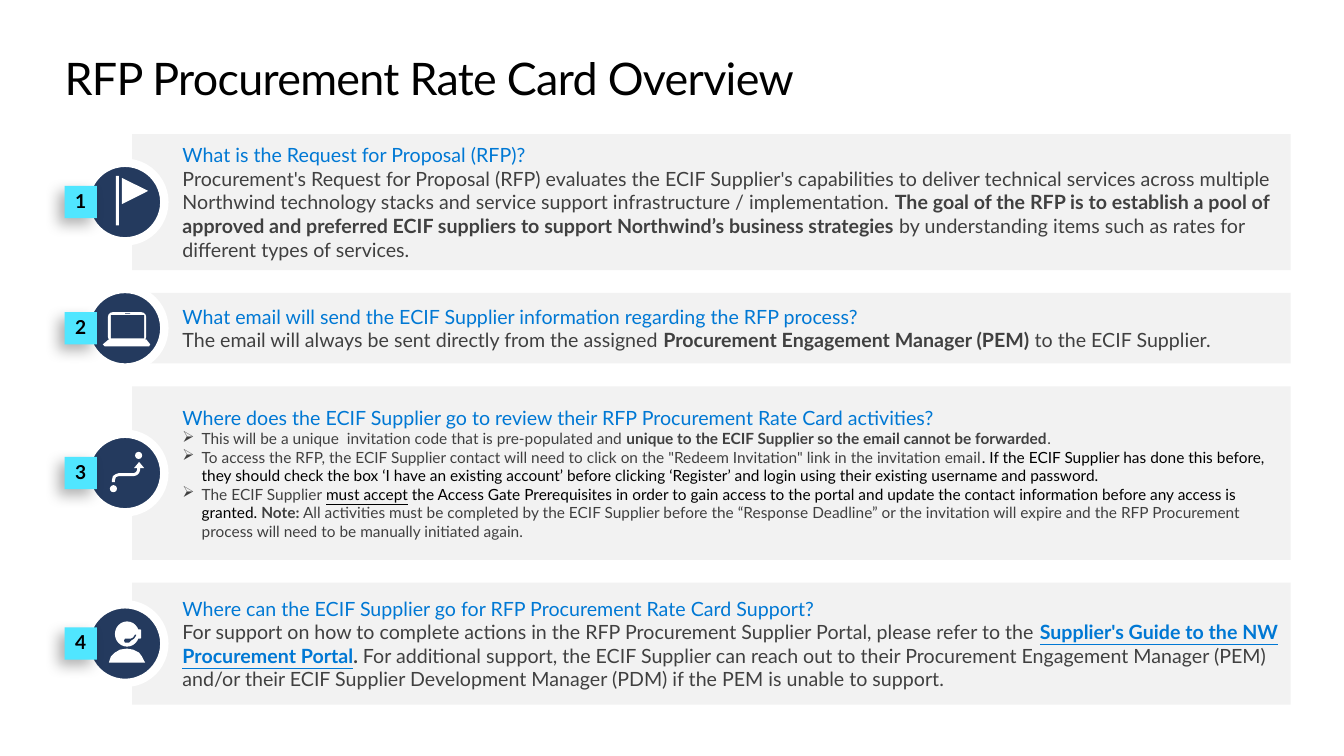
from dataclasses import dataclass

from lxml import etree
from pptx import Presentation
from pptx.dml.color import RGBColor
from pptx.enum import shapes, text
from pptx.oxml import ns
from pptx.util import Inches, Pt


@dataclass(frozen=True)
class Theme:
    font: str = "Lato"
    black: str = "000000"
    white: str = "FFFFFF"
    panel: str = "F2F2F2"
    blue: str = "0078D4"
    gray: str = "404040"
    navy: str = "243A5E"
    cyan: str = "50E6FF"
    title: float = 32
    body: float = 14
    bullet: float = 11
    number: float = 13.7


T = Theme()
SHAPE = shapes.MSO_SHAPE

# A run is its text followed by any of: "bold", "underline", a colour.
SECTIONS = [
    (1.35, "flag", "What is the Request for Proposal (RFP)?", False, [[
        ("Procurement's Request for Proposal (RFP) evaluates the ECIF Supplier's capabilities to deliver "
         "technical services across multiple Northwind technology stacks and service support "
         "infrastructure / implementation. ",),
        ("The goal of the RFP is to establish a pool of approved and preferred ECIF suppliers to support "
         "Northwind’s business strategies ", "bold"),
        ("by understanding items such as rates for different types of services.",)]]),
    (0.70, "laptop", "What email will send the ECIF Supplier information regarding the RFP process?", False, [[
        ("The email will always be sent directly from the assigned ",),
        ("Procurement Engagement Manager (PEM)", "bold"),
        (" to the ECIF Supplier.",)]]),
    (1.72, "route", "Where does the ECIF Supplier go to review their RFP Procurement Rate Card activities?", True, [
        [("This will be a unique  invitation code that is pre-populated and ",),
         ("unique to the ECIF Supplier so the email cannot be forwarded", "bold"),
         (".",)],
        [("To access the RFP, the ECIF Supplier contact will need to click on the \"Redeem Invitation\" "
          "link in the invitation email",),
         (". If the ECIF Supplier has done this before, they should check the box ‘I have an existing "
          "account’ before clicking ‘Register’ and login using their existing username and password.",
          T.black)],
        [("The ECIF Supplier ",),
         ("must accept", "underline", T.black),
         (" the Access Gate Prerequisites in order to gain access to the portal and update the contact "
          "information before any access is granted. ", T.black),
         ("Note:", "bold"),
         (" All activities must be completed by the ECIF Supplier before the “Response Deadline” or the "
          "invitation will expire and the RFP Procurement process will need to be manually initiated again.",)]]),
    (1.21, "agent", "Where can the ECIF Supplier go for RFP Procurement Rate Card Support?", False, [[
        ("For support on how to complete actions in the RFP Procurement Supplier Portal, please refer to the ",),
        ("Supplier's Guide to the NW Procurement Portal", "bold", "underline", T.blue),
        (". ", "bold"),
        ("For additional support, the ECIF Supplier can reach out to their Procurement Engagement Manager "
         "(PEM) and/or their ECIF Supplier Development Manager (PDM) if the PEM is unable to support.",)]]),
]

# Icon parts in hundredths of an inch from the centre of the badge:
# a preset with its box, or None with the points of an outline.
ICONS = {
    "flag": [
        (None, [(-3, -24), (23, -11), (-3, 2)], T.white),
        (SHAPE.RECTANGLE, (-9, -26, 3, 49), T.white)],
    "laptop": [
        (SHAPE.ROUNDED_RECTANGLE, (-17, -16, 38, 29), T.white),
        (SHAPE.RECTANGLE, (-14, -13, 33, 23), T.navy),
        (SHAPE.RECTANGLE, (0, -15, 5, 0.6), T.navy),
        (None, [(-16, 11), (21, 11), (25, 16), (24, 18), (-20, 18), (-22, 16)], T.white)],
    "route": [
        (SHAPE.OVAL, (-15, 12, 7, 7), T.white),
        (SHAPE.OVAL, (10, -21, 7, 7), T.white),
        (None, [(19, -5), (14, -11), (9, -5), (12, -5), (12, -3), (11, -1), (9, 0), (-6, 0),
                (-9, 1), (-12, 3), (-13, 7), (-13, 9), (-10, 9), (-10, 7), (-9, 4), (-6, 3),
                (9, 3), (12, 2), (14, 0), (15, -3), (15, -5)], T.white)],
    "agent": [
        (SHAPE.OVAL, (-10, -22, 24, 25), T.white),
        (SHAPE.ROUNDED_RECTANGLE, (11, -14, 5, 9), T.white),
        (None, [(-16, 19), (-14, 13), (-10, 9), (-5, 6), (2, 5), (8, 6), (14, 9), (17, 13),
                (20, 19)], T.white),
        (None, [(0, -5), (-1, -3), (0, -1), (4, -1), (6, -3), (9, -5), (11, -8), (11, -9),
                (10, -9), (8, -6), (6, -5)], T.navy)],
}


def paint(sp, fill):
    sp.shadow.inherit = False
    sp.fill.solid()
    sp.fill.fore_color.rgb = RGBColor.from_string(fill)
    sp.line.fill.background()
    return sp


def add_preset(s, kind, x, y, w, h, fill):
    return paint(s.shapes.add_shape(kind, Inches(x), Inches(y), Inches(w), Inches(h)), fill)


def style_run(r, size, color, bold=False, underline=False):
    r.font.name, r.font.size = T.font, Pt(size)
    r.font.color.rgb = RGBColor.from_string(color)
    r.font.bold, r.font.underline = bold, underline


def set_insets(tf, left=0, top=0, right=0, bottom=0):
    tf.word_wrap = True
    tf.margin_left, tf.margin_top = Inches(left), Inches(top)
    tf.margin_right, tf.margin_bottom = Inches(right), Inches(bottom)


def add_title(s, x, y, w, h):
    tf = s.shapes.add_textbox(Inches(x), Inches(y), Inches(w), Inches(h)).text_frame
    set_insets(tf)
    tf.text = "RFP Procurement Rate Card Overview"
    r = tf.paragraphs[0].runs[0]
    style_run(r, T.title, T.black)
    r.font._element.set("spc", "-50")


def add_bullet(p):
    pPr = p._p.get_or_add_pPr()
    pPr.set("marL", str(Inches(0.19)))
    pPr.set("indent", str(-Inches(0.19)))
    etree.SubElement(pPr, ns.qn("a:buChar"), char="➢")


def add_panel(s, x, y, w, h, heading, bulleted, paragraphs):
    tf = add_preset(s, SHAPE.RECTANGLE, x, y, w, h, T.panel).text_frame
    set_insets(tf, 0.5, 0.05, 0.1, 0.05)
    tf.vertical_anchor = text.MSO_ANCHOR.MIDDLE
    tf.text = heading
    tf.paragraphs[0].alignment = text.PP_ALIGN.LEFT
    style_run(tf.paragraphs[0].runs[0], T.body, T.blue)
    for runs in paragraphs:
        p = tf.add_paragraph()
        p.alignment = text.PP_ALIGN.LEFT
        if bulleted:
            add_bullet(p)
        for words, *marks in runs:
            r = p.add_run()
            r.text = words
            color = next((m for m in marks if m not in ("bold", "underline")), T.gray)
            style_run(r, T.bullet if bulleted else T.body, color, "bold" in marks, "underline" in marks)


def add_soft_shadow(sp):
    effects = sp._element.spPr.find(ns.qn("a:effectLst"))
    shadow = etree.SubElement(effects, ns.qn("a:outerShdw"), blurRad=str(Pt(10)), dist=str(Pt(6)),
                              dir=str(135 * 60000), algn="ctr", rotWithShape="0")
    color = etree.SubElement(shadow, ns.qn("a:srgbClr"), val=T.black)
    etree.SubElement(color, ns.qn("a:alpha"), val="30000")


def add_icon(s, cx, cy, parts):
    for kind, geometry, fill in parts:
        if kind is None:
            points = [(Inches(cx + dx / 100), Inches(cy + dy / 100)) for dx, dy in geometry]
            outline = s.shapes.build_freeform(*points[0])
            outline.add_line_segments(points[1:], close=True)
            paint(outline.convert_to_shape(), fill)
        else:
            dx, dy, w, h = (v / 100 for v in geometry)
            add_preset(s, kind, cx + dx, cy + dy, w, h, fill)


def add_badge(s, cx, cy, number, icon):
    """Icon disc centred on the given point, with its number tag on the left."""
    disc, tag = 0.78, 0.32
    sp = add_preset(s, SHAPE.OVAL, cx - disc / 2, cy - disc / 2, disc, disc, T.navy)
    sp.line.color.rgb = RGBColor.from_string(T.white)
    sp.line.width = Pt(6)
    sp = add_preset(s, SHAPE.RECTANGLE, cx - 0.6, cy - tag / 2, tag, tag, T.cyan)
    add_soft_shadow(sp)
    tf = sp.text_frame
    set_insets(tf)
    tf.vertical_anchor = text.MSO_ANCHOR.MIDDLE
    tf.text = str(number)
    p = tf.paragraphs[0]
    p.alignment, p.line_spacing = text.PP_ALIGN.CENTER, 0.9
    style_run(p.runs[0], T.number, T.black, bold=True)
    add_icon(s, cx, cy, ICONS[icon])


def add_sections(s, x, y, w, h):
    """Stack the panels with equal gaps so that they fill the box."""
    gap = (h - sum(section[0] for section in SECTIONS)) / (len(SECTIONS) - 1)
    for number, (height, icon, *content) in enumerate(SECTIONS, 1):
        add_panel(s, x, y, w, height, *content)
        add_badge(s, x - 0.07, y + height / 2, number, icon)
        y += height + gap


def main():
    prs = Presentation()
    prs.slide_width, prs.slide_height = Inches(13.33), Inches(7.5)
    s = prs.slides.add_slide(prs.slide_layouts[6])
    add_title(s, 0.64, 0.5, 12.05, 0.54)
    add_sections(s, 1.31, 1.33, 11.49, 5.66)
    prs.save("out.pptx")


if __name__ == "__main__":
    main()
